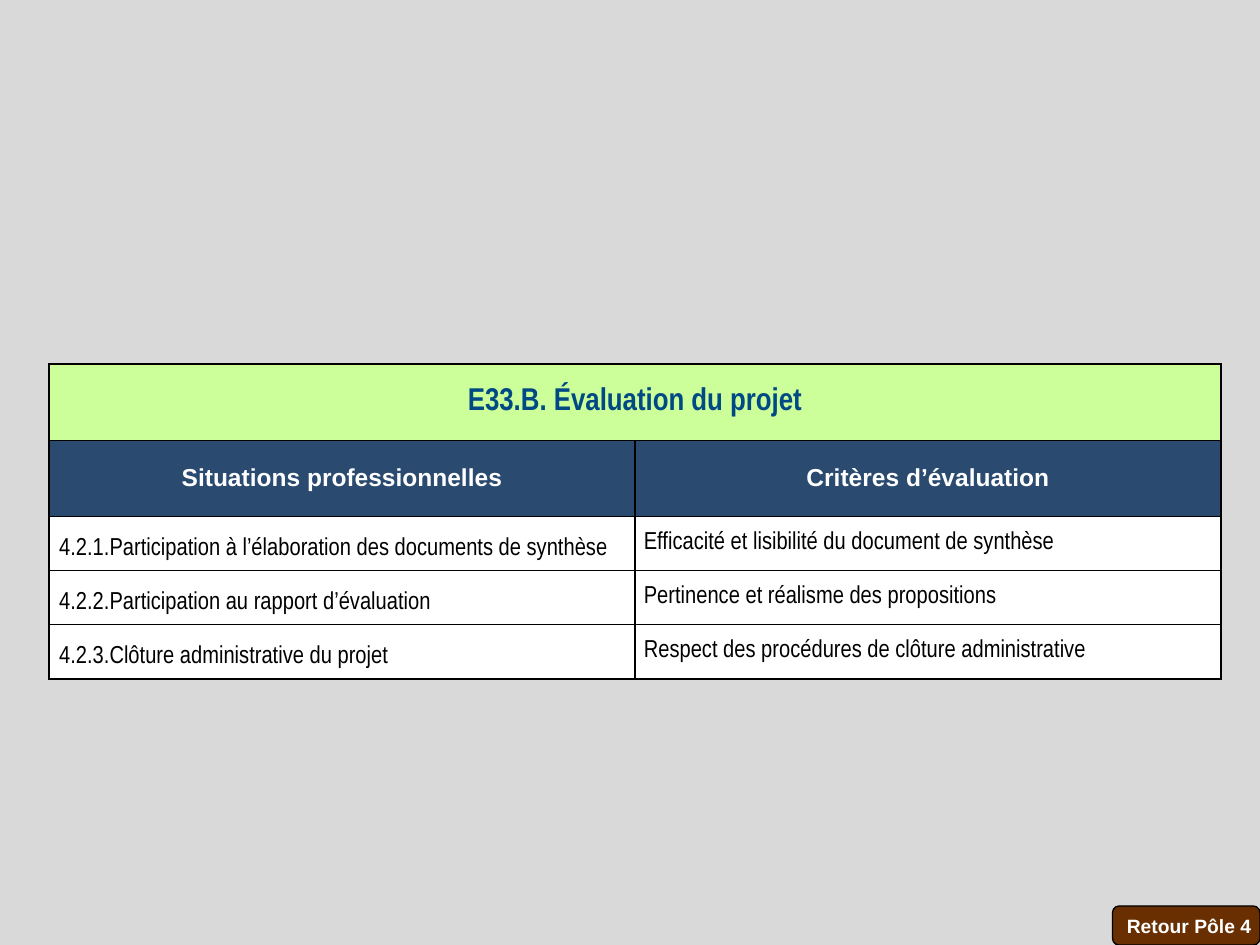
"""Build the project evaluation slide with its criteria table and return button."""
from dataclasses import dataclass

from lxml import etree
from pptx import Presentation
from pptx.dml.color import RGBColor
from pptx.enum.shapes import MSO_SHAPE
from pptx.enum.text import MSO_ANCHOR, PP_ALIGN
from pptx.oxml.ns import qn
from pptx.util import Inches, Pt

ROUND = MSO_SHAPE.ROUNDED_RECTANGLE
MIDDLE = MSO_ANCHOR.MIDDLE
LEFT, CENTER = PP_ALIGN.LEFT, PP_ALIGN.CENTER
WIDE, HIGH = 10, 7.5


@dataclass(frozen=True)
class Theme:
    """Colours, fonts and type sizes of the slide."""
    back: str = "D9D9D9"
    lime: str = "CCFF99"
    navy: str = "2A4A70"
    blue: str = "004985"
    brown: str = "692F01"
    white: str = "FFFFFF"
    black: str = "000000"
    sans: str = "Arial"
    narrow: str = "Arial Narrow"
    title: int = 18
    body: int = 14
    small: int = 11


@dataclass(frozen=True)
class Style:
    """Look of one kind of text block."""
    fill: str
    color: str
    font: str
    size: int
    bold: bool = True
    align: PP_ALIGN = LEFT
    space: float = 1.0
    indent: float = 0


@dataclass(frozen=True)
class Row:
    """One table row: height, texts and a style for each text."""
    height: float
    texts: tuple[str, ...]
    styles: tuple[Style, ...]


THEME = Theme()
TITLE = Style(THEME.lime, THEME.blue, THEME.narrow, THEME.title, align=CENTER)
HEAD = Style(THEME.navy, THEME.white, THEME.sans, THEME.body, align=CENTER)
TASK = Style(THEME.white, THEME.black, THEME.narrow, THEME.body, False, space=1.5, indent=0.01)
TEST = Style(THEME.white, THEME.black, THEME.narrow, THEME.body, False)
BUTTON = Style(THEME.brown, THEME.white, THEME.sans, THEME.small)

PAIRS = (
    ("4.2.1.Participation à l’élaboration des documents de synthèse",
     "Efficacité et lisibilité du document de synthèse"),
    ("4.2.2.Participation au rapport d’évaluation",
     "Pertinence et réalisme des propositions"),
    ("4.2.3.Clôture administrative du projet",
     "Respect des procédures de clôture administrative"),
)
ROWS = (
    Row(0.61, ("E33.B. Évaluation du projet",), (TITLE,)),
    Row(0.6, ("Situations professionnelles", "Critères d’évaluation"), (HEAD, HEAD)),
    *(Row(0.43, pair, (TASK, TEST)) for pair in PAIRS),
)


def paint(fill, color: str) -> None:
    """Give a fill one solid colour."""
    fill.solid()
    fill.fore_color.rgb = RGBColor.from_string(color)


def write(frame, text: str, style: Style) -> None:
    """Put styled text into a text frame."""
    para = frame.paragraphs[0]
    para.alignment, para.line_spacing = style.align, style.space
    if style.indent:
        props = para._p.get_or_add_pPr()
        props.set("marL", str(Inches(style.indent)))
        props.set("indent", "0")
    run = para.add_run()
    run.text = text
    looks = {"name": style.font, "size": Pt(style.size), "bold": style.bold}
    for key, value in looks.items():
        setattr(run.font, key, value)
    run.font.color.rgb = RGBColor.from_string(style.color)


def edge(cell) -> None:
    """Draw a thin black line on each side of a cell."""
    props = cell._tc.get_or_add_tcPr()
    for side in ("lnL", "lnR", "lnT", "lnB"):
        line = etree.SubElement(props, qn(f"a:{side}"), w=str(Pt(1)))
        solid = etree.SubElement(line, qn("a:solidFill"))
        etree.SubElement(solid, qn("a:srgbClr"), val=THEME.black)


def draw_table(slide, left: float, top: float, width: float) -> None:
    """Draw the rows on two equal columns."""
    tall = sum(row.height for row in ROWS)
    table = slide.shapes.add_table(
        len(ROWS), 2, Inches(left), Inches(top), Inches(width), Inches(tall)).table
    for col in table.columns:
        col.width = Inches(width / 2)
    pads = {"margin_left": Inches(0.07), "margin_right": Inches(0.07),
            "margin_top": 0, "margin_bottom": 0, "vertical_anchor": MIDDLE}
    for at, row in enumerate(ROWS):
        table.rows[at].height = Inches(row.height)
        for cell in table.rows[at].cells:
            edge(cell)
        if len(row.texts) == 1:
            table.cell(at, 0).merge(table.cell(at, 1))
        for col, (text, style) in enumerate(zip(row.texts, row.styles)):
            cell = table.cell(at, col)
            for key, value in pads.items():
                setattr(cell, key, value)
            paint(cell.fill, style.fill)
            write(cell.text_frame, text, style)


def draw_button(slide, text: str, width: float, height: float) -> None:
    """Draw a button in the lower right corner."""
    shape = slide.shapes.add_shape(
        ROUND, Inches(WIDE - width), Inches(HIGH - height), Inches(width), Inches(height))
    shape.shadow.inherit = False
    paint(shape.fill, BUTTON.fill)
    paint(shape.line.fill, THEME.black)
    shape.line.width = Pt(0.75)
    frame = shape.text_frame
    frame.word_wrap, frame.vertical_anchor = False, MIDDLE
    write(frame, text, BUTTON)


def main() -> None:
    """Build and save the slide."""
    deck = Presentation()
    deck.slide_width, deck.slide_height = Inches(WIDE), Inches(HIGH)
    slide = deck.slides.add_slide(deck.slide_layouts[6])
    paint(slide.background.fill, THEME.back)
    draw_table(slide, 0.039 * WIDE, 0.385 * HIGH, 0.93 * WIDE)
    draw_button(slide, "Retour Pôle 4", 1.17, 0.31)
    deck.save("out.pptx")


if __name__ == "__main__":
    main()
